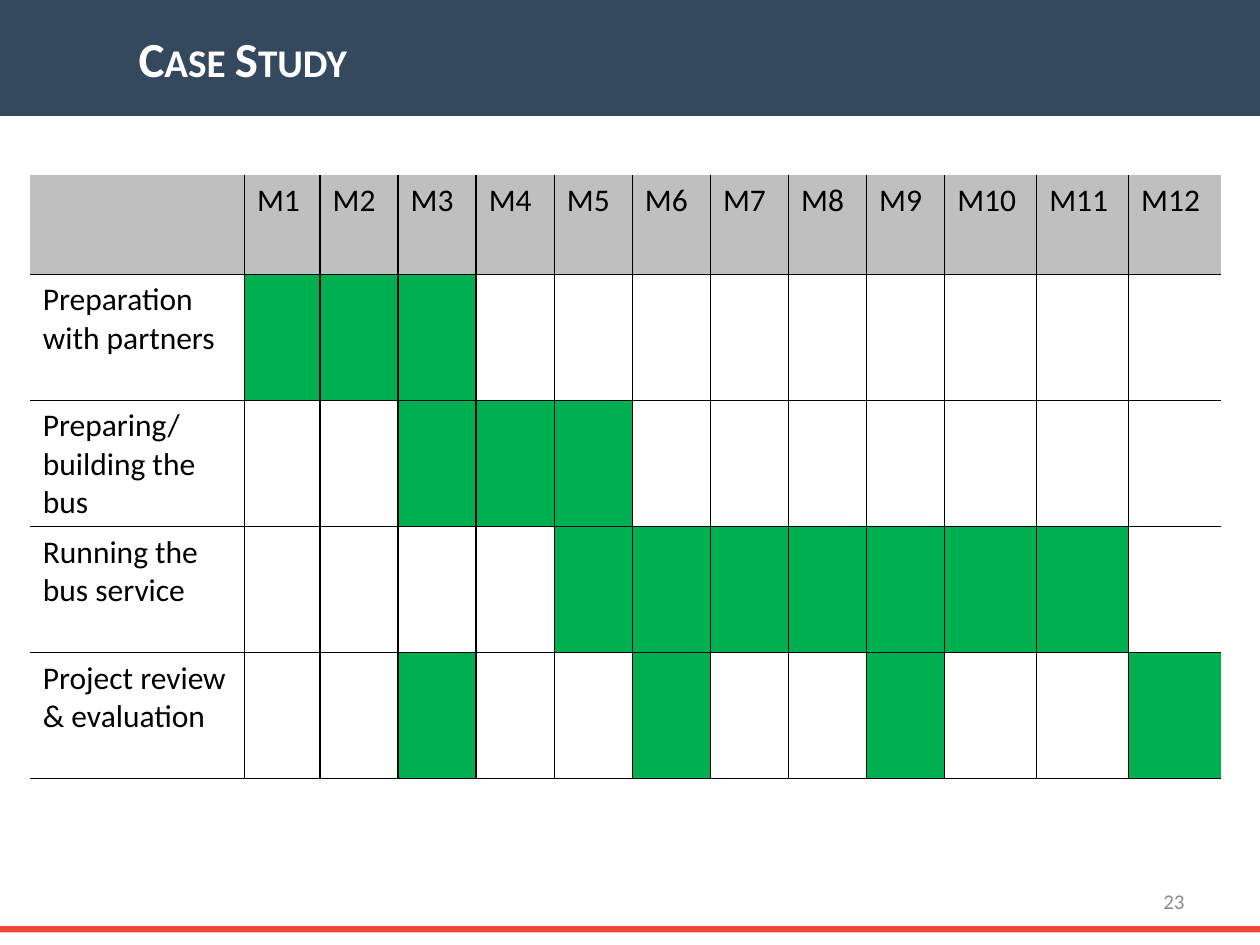
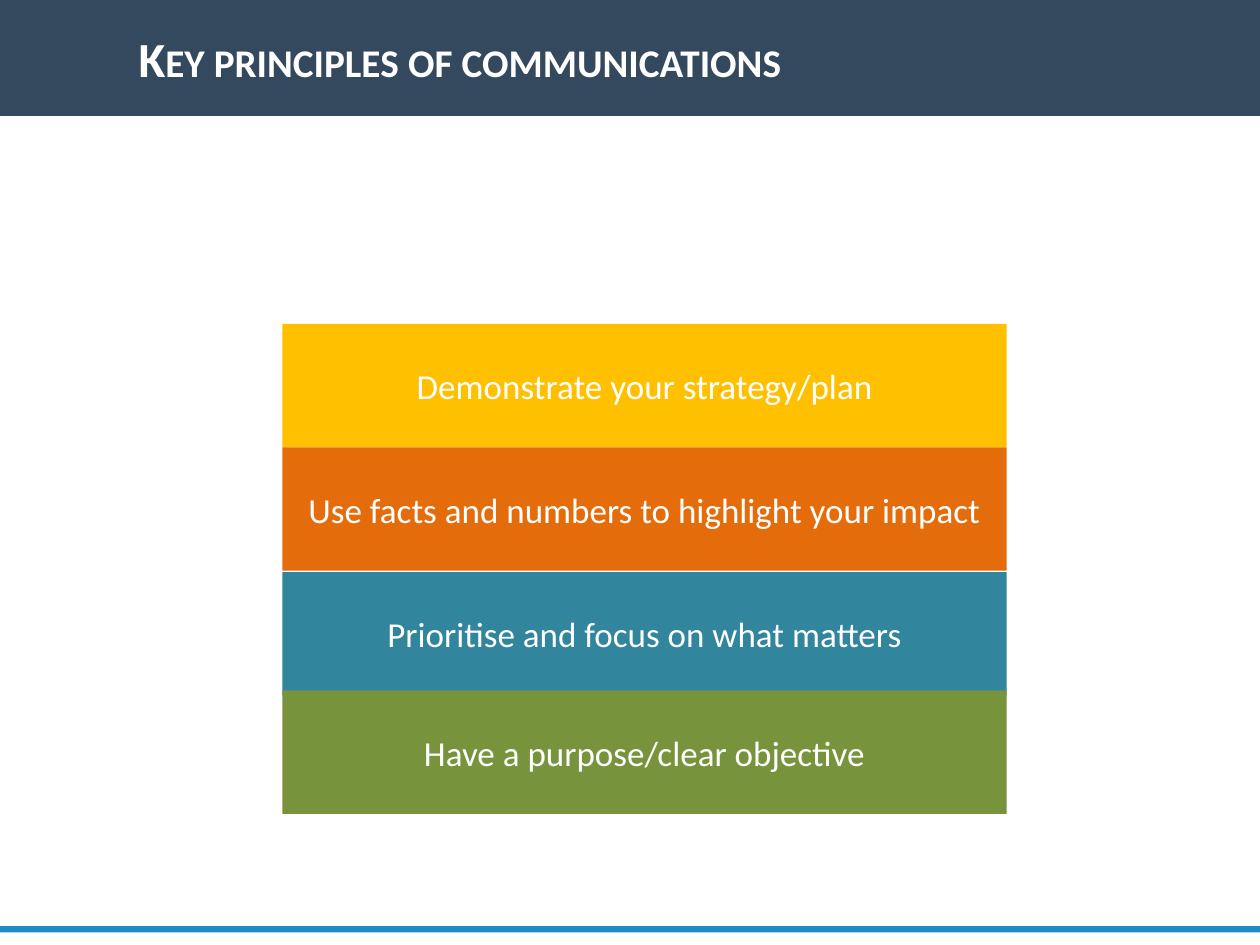
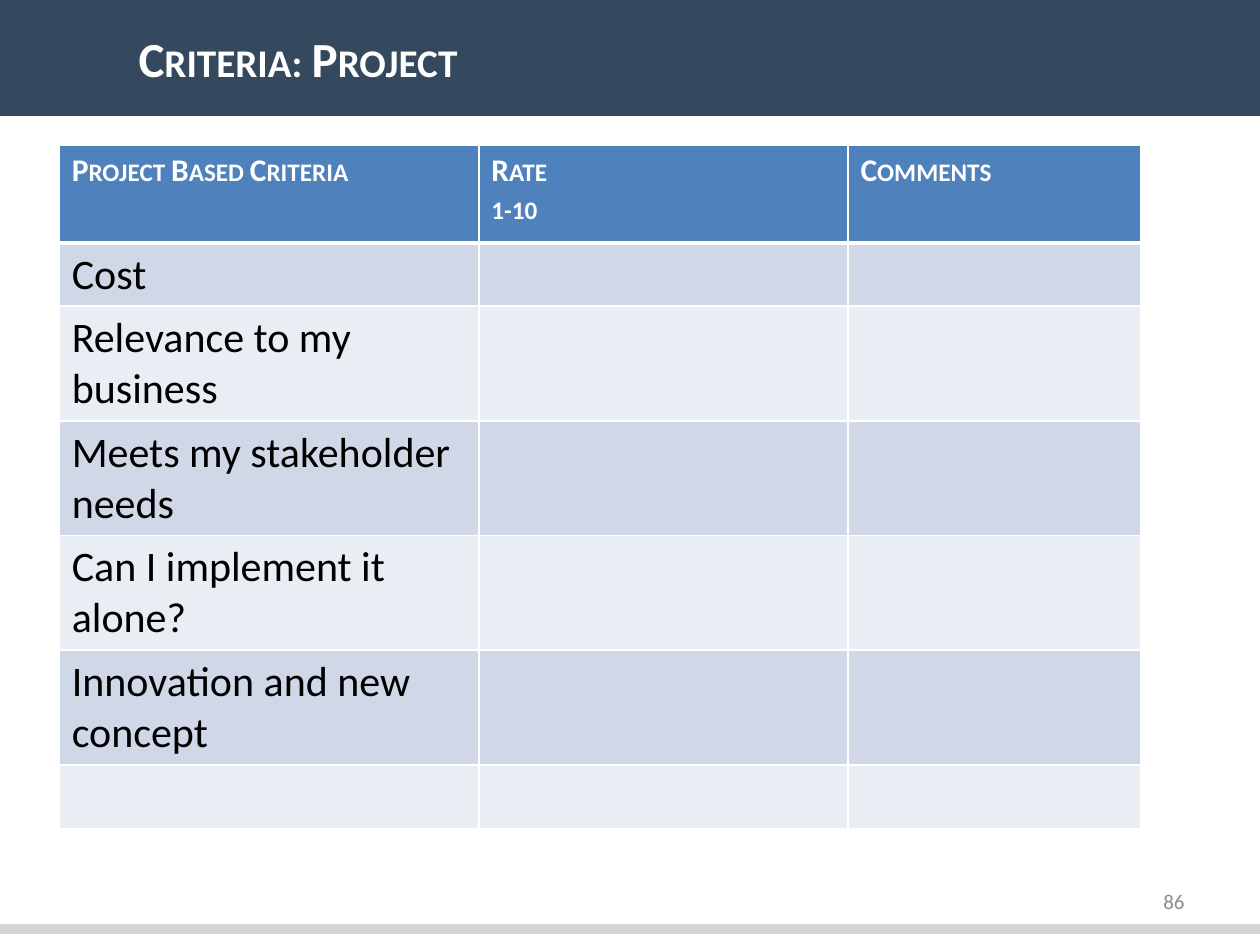
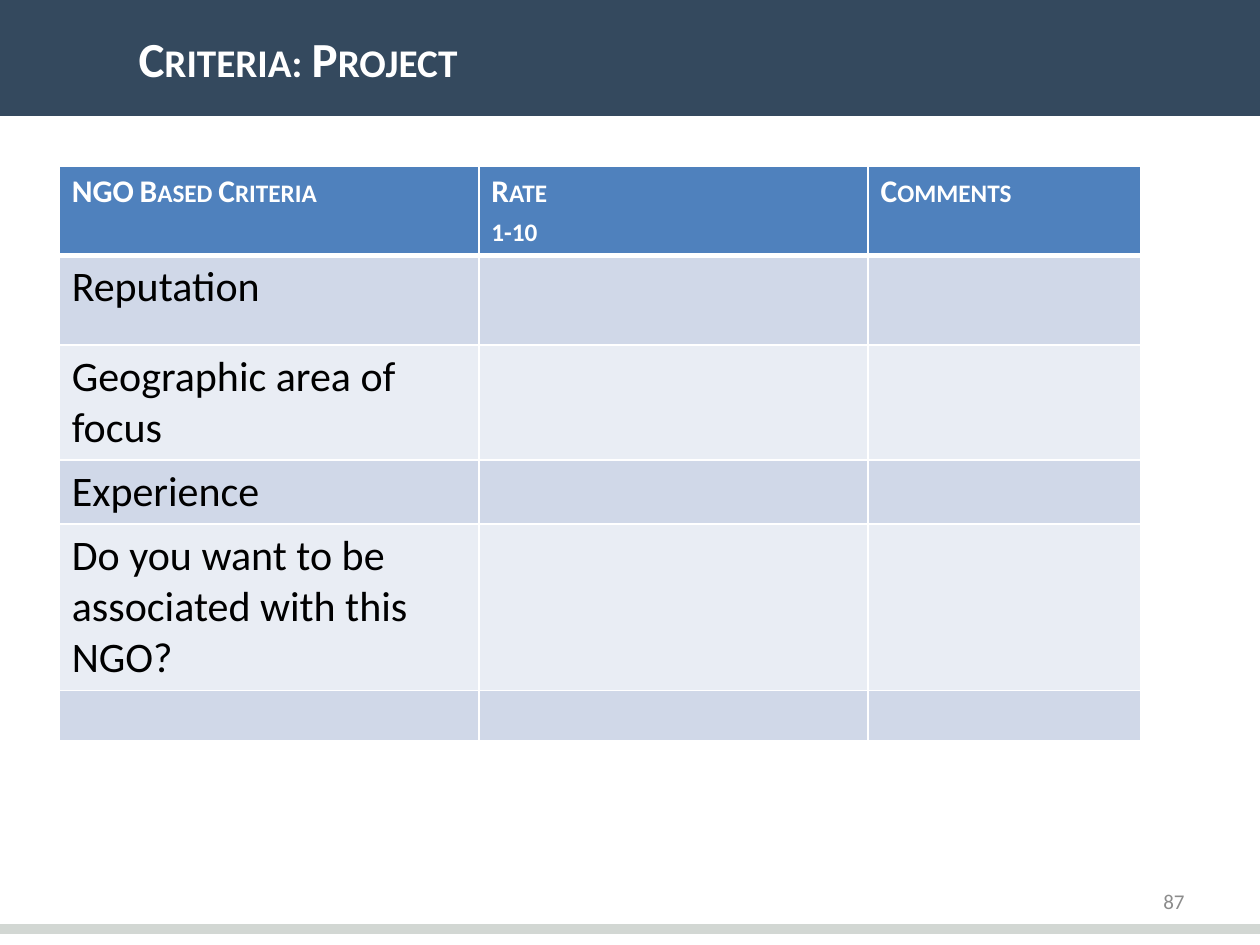
from lxml.etree import SubElement
from pptx import Presentation
from pptx.dml.color import RGBColor
from pptx.enum.shapes import MSO_SHAPE
from pptx.enum.text import MSO_ANCHOR, MSO_AUTO_SIZE, PP_ALIGN
from pptx.oxml.ns import qn
from pptx.util import Inches, Pt

W, H = 10, 7.5
FONT = "Calibri"
NAVY, WHITE, BLACK, GREY = "34495E", "FFFFFF", "000000", "8C8C8C"
RED, BLUE, SILVER = "EF4836", "1E8BC3", "D2D7D3"
HEAD_GREY, GREEN = "BFBFBF", "00B050"
HEAD_BLUE, BANDS = "4F81BD", ("D0D8E8", "E9EDF4")

MONTH_WIDTHS = [0.6] + [0.62] * 8 + [0.73] * 3
TASKS = [
    ("Preparation with partners", {1, 2, 3}),
    ("Preparing/ building the bus", {3, 4, 5}),
    ("Running the bus service", set(range(5, 12))),
    ("Project review & evaluation", {3, 6, 9, 12}),
]
PRINCIPLES = [
    (2.57, "Demonstrate your strategy/plan", "FFC000"),
    (3.55, "Use facts and numbers to highlight your impact", "E46C0A"),
    (4.54, "Prioritise and focus on what matters", "31859C"),
    (5.48, "Have a purpose/clear objective", "77933C"),
]


def rgb(value):
    """Turn a hex string into a colour."""
    return RGBColor.from_string(value)


def box(x, y, w, h):
    """Turn a box in inches into slide units."""
    return Inches(x), Inches(y), Inches(w), Inches(h)


def write(tf, text, size=18, color=BLACK, bold=False, small=False,
          align=PP_ALIGN.LEFT, anchor=MSO_ANCHOR.TOP, indent=0):
    """Write one paragraph per line of text in the given format."""
    tf.word_wrap = True
    tf.vertical_anchor = anchor
    for i, line in enumerate(text.split("\n")):
        p = tf.add_paragraph() if i else tf.paragraphs[0]
        p.alignment = align
        if indent:
            p._p.get_or_add_pPr().set("marL", str(Inches(indent)))
        r = p.add_run()
        r.text = line
        r.font.name, r.font.size, r.font.bold = FONT, Pt(size), bold
        r.font.color.rgb = rgb(color)
        if small:
            r._r.get_or_add_rPr().set("cap", "small")


def add_rect(s, x, y, w, h, color, line=0):
    """Add a plain rectangle, outlined in its own colour if line is given."""
    sp = s.shapes.add_shape(MSO_SHAPE.RECTANGLE, *box(x, y, w, h))
    sp.shadow.inherit = False
    sp.fill.solid()
    sp.fill.fore_color.rgb = rgb(color)
    if line:
        sp.line.color.rgb = rgb(color)
        sp.line.width = Pt(line)
    else:
        sp.line.fill.background()
    return sp


def add_slide(prs, title, accent, number=None, line=0):
    """Start a slide with its title band, footer bar and page number."""
    s = prs.slides.add_slide(prs.slide_layouts[5])
    sp = s.shapes.title
    sp.left, sp.top, sp.width, sp.height = box(0, 0, W, 0.92)
    sp.fill.solid()
    sp.fill.fore_color.rgb = rgb(NAVY)
    sp.text_frame.auto_size = MSO_AUTO_SIZE.NONE
    write(sp.text_frame, title, size=28, color=WHITE, bold=True, small=True,
          anchor=MSO_ANCHOR.MIDDLE, indent=1)
    add_rect(s, 0, H - 0.15, W, 0.05, accent, line)
    if number:
        tb = s.shapes.add_textbox(*box(7.17, 6.95, 2.33, 0.4))
        write(tb.text_frame, str(number), size=12, color=GREY,
              align=PP_ALIGN.RIGHT, anchor=MSO_ANCHOR.MIDDLE)
    return s


def add_grid(s, x, y, cols, rows):
    """Add an unstyled table with the given column widths and row heights."""
    frame = s.shapes.add_table(len(rows), len(cols),
                               *box(x, y, sum(cols), sum(rows)))
    table = frame.table
    table.first_row = table.horz_banding = False
    for col, w in zip(table.columns, cols):
        col.width = Inches(w)
    for row, h in zip(table.rows, rows):
        row.height = Inches(h)
    return table


def style_cell(cell, fill, color, widths):
    """Draw the left, right, top and bottom borders, then the fill."""
    tc_pr = cell._tc.get_or_add_tcPr()
    for side, width in zip("LRTB", widths):
        ln = SubElement(tc_pr, qn(f"a:ln{side}"), w=str(Pt(width)))
        if width:
            solid = SubElement(ln, qn("a:solidFill"))
            SubElement(solid, qn("a:srgbClr"), val=color)
        else:
            SubElement(ln, qn("a:noFill"))
    if fill:
        cell.fill.solid()
        cell.fill.fore_color.rgb = rgb(fill)
    else:
        cell.fill.background()


def add_schedule(s, x, y):
    """Add the month plan with the active months filled."""
    table = add_grid(s, x, y, [1.7] + MONTH_WIDTHS, [0.79] + [1] * len(TASKS))
    last = len(MONTH_WIDTHS)
    for i, (task, active) in enumerate([("", set())] + TASKS):
        for j in range(last + 1):
            cell = table.cell(i, j)
            fill = HEAD_GREY if i == 0 else GREEN if j in active else None
            style_cell(cell, fill, BLACK, (j > 0, j < last, i > 0, 1))
            text = task if j == 0 else f"M{j}" if i == 0 else ""
            if text:
                write(cell.text_frame, text)


def add_criteria(s, x, y, cols, rows, subject, criteria):
    """Add a banded rating table with blank cells to fill in."""
    table = add_grid(s, x, y, cols, rows)
    for j, head in enumerate((f"{subject} Based Criteria", "Rate\n1-10", "Comments")):
        cell = table.cell(0, j)
        style_cell(cell, HEAD_BLUE, WHITE, (1, 1, 1, 3))
        write(cell.text_frame, head, color=WHITE, bold=True, small=True)
    for i in range(1, len(rows)):
        for j in range(len(cols)):
            style_cell(table.cell(i, j), BANDS[(i - 1) % 2], WHITE,
                       (1, 1, 3 if i == 1 else 1, 1))
    for i, text in enumerate(criteria, 1):
        write(table.cell(i, 0).text_frame, text, size=24)


def add_principles(s, x, w, h):
    """Stack the principles as coloured blocks."""
    for top, text, color in PRINCIPLES:
        sp = add_rect(s, x, top, w, h, color)
        write(sp.text_frame, text, size=20, color=WHITE,
              align=PP_ALIGN.CENTER, anchor=MSO_ANCHOR.MIDDLE)


def main():
    """Build the four slides."""
    prs = Presentation()
    prs.slide_width, prs.slide_height = Inches(W), Inches(H)

    add_schedule(add_slide(prs, "Case Study", RED, 23), 0.24, 1.39)
    add_principles(add_slide(prs, "Key principles of communications", BLUE),
                   2.24, 5.75, 0.98)
    add_criteria(add_slide(prs, "Criteria: Project", SILVER, 86, line=2),
                 0.47, 1.15, [3.33, 2.93, 2.32],
                 [0.78, 0.5] + [0.91] * 4 + [0.51], "Project",
                 ["Cost", "Relevance to my business",
                  "Meets my stakeholder needs", "Can I implement it alone?",
                  "Innovation and new concept"])
    add_criteria(add_slide(prs, "Criteria: Project", SILVER, 87, line=2),
                 0.47, 1.32, [3.33, 3.09, 2.16],
                 [0.71, 0.71, 0.91, 0.51, 1.32, 0.4], "NGO",
                 ["Reputation", "Geographic area of focus", "Experience",
                  "Do you want to be associated with this NGO?"])
    prs.save("out.pptx")


if __name__ == "__main__":
    main()
